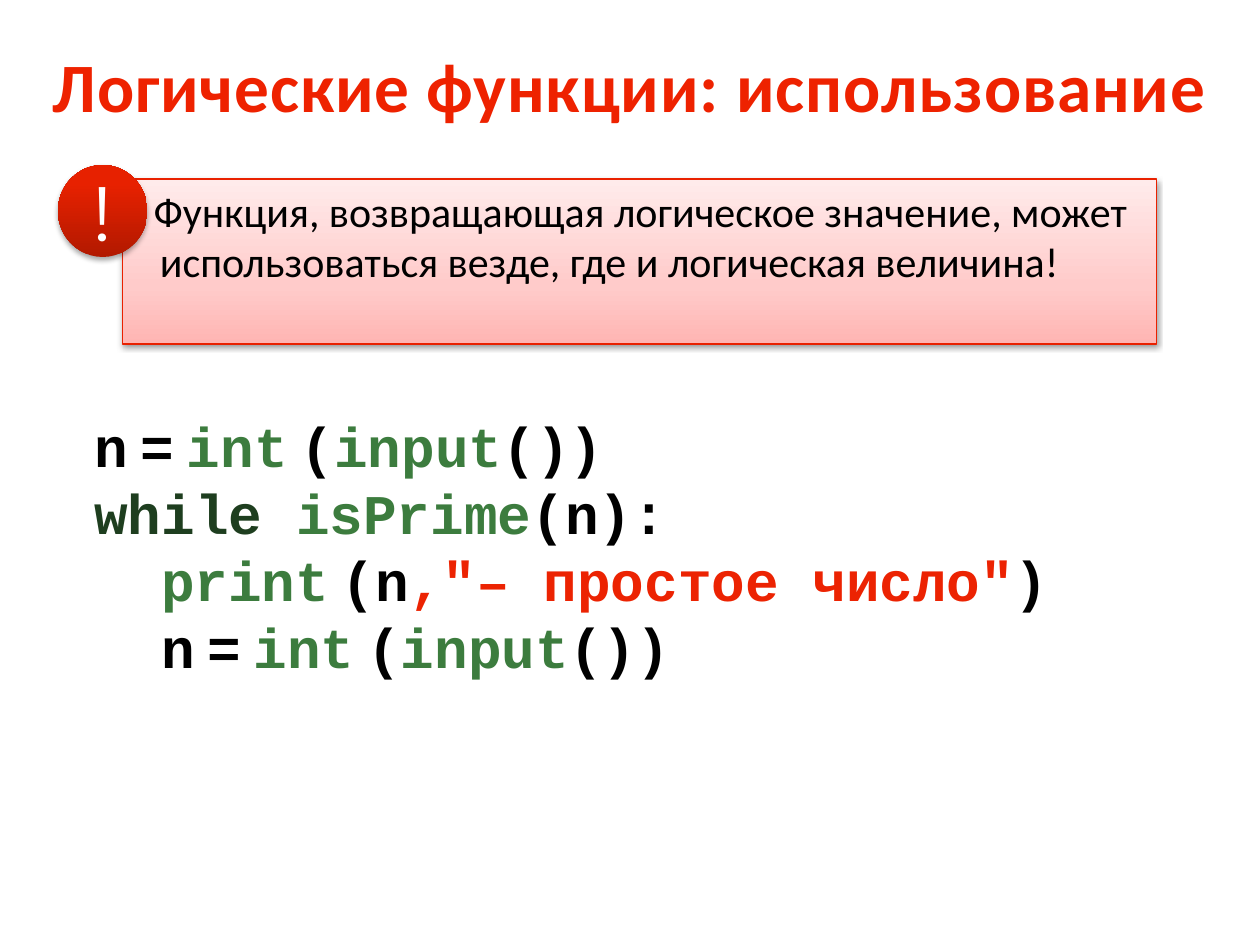
from copy import deepcopy

from lxml import etree
from pptx import Presentation
from pptx import util as u
from pptx.dml.color import RGBColor
from pptx.enum import shapes, text
from pptx.oxml import ns

RED = RGBColor(0xEE, 0x22, 0x00)
STRING_RED = RGBColor(0xEC, 0x23, 0x02)
BORDER_RED = RGBColor(0xE9, 0x21, 0x00)
GREEN = RGBColor(0x3C, 0x7C, 0x3E)
DARK_GREEN = RGBColor(0x1E, 0x3E, 0x1F)
BLACK = RGBColor(0, 0, 0)
WHITE = RGBColor(0xFF, 0xFF, 0xFF)
CALLOUT_STOPS = [(0, RGBColor(0xFF, 0xB5, 0xB3)), (0.35, RGBColor(0xFF, 0xCB, 0xCA)),
                 (1, RGBColor(0xFF, 0xEB, 0xEB))]
BADGE_STOPS = [(0, RGBColor(0xB2, 0x19, 0x00)), (0.8, RGBColor(0xE7, 0x21, 0x00)),
               (1, RGBColor(0xE8, 0x21, 0x00))]

TITLE = {"name": "Calibri", "size": u.Pt(39.6), "bold": True}
BODY = {"name": "Calibri", "size": u.Pt(24)}
BADGE = {"name": "Montserrat", "size": u.Pt(44)}
CODE = {"name": "Courier New", "size": u.Pt(32), "bold": True}
NARROW_SPACE = {**CODE, "name": "Calibri"}

READ_NUMBER = [("n", BLACK), (" ", None), ("=", BLACK), (" ", None), ("int", GREEN),
               (" ", None), ("(", BLACK), ("input", GREEN), ("())", BLACK)]
PROGRAM = [
    (0, READ_NUMBER),
    (0, [("while ", DARK_GREEN), ("isPrime", GREEN), ("(n):", BLACK)]),
    (1, [("print", GREEN), (" ", None), ("(n", BLACK),
         (",\"– простое число\"", STRING_RED), (")", BLACK)]),
    (1, READ_NUMBER),
]


def apply(target, values):
    """Set every attribute in values on target."""
    for name, value in values.items():
        setattr(target, name, value)


class SlideBuilder:
    """Holds the style and the current slide."""

    def __init__(self, presentation):
        """Add a slide with only a title."""
        self.slide = presentation.slides.add_slide(presentation.slide_layouts[5])
        self.group = None

    def box(self, left, top, width, height):
        """Return four lengths in inches."""
        return [u.Inches(value) for value in (left, top, width, height)]

    def run(self, paragraph, words, style, color):
        """Add formatted words to a paragraph."""
        run = paragraph.add_run()
        run.text = words
        apply(run.font, style)
        run.font.color.rgb = color
        return run

    def indent(self, paragraph, margin, first):
        """Set the left margin and first line indent."""
        properties = paragraph._p.get_or_add_pPr()
        properties.set("marL", str(u.Inches(margin)))
        properties.set("indent", str(u.Inches(first)))

    def title(self, words, box):
        """Fill and place the title."""
        shape = self.slide.shapes.title
        apply(shape, dict(zip(("left", "top", "width", "height"), self.box(*box))))
        shape.text_frame.vertical_anchor = text.MSO_ANCHOR.MIDDLE
        paragraph = shape.text_frame.paragraphs[0]
        paragraph.alignment = text.PP_ALIGN.CENTER
        run = self.run(paragraph, words, TITLE, RED)
        run.font._element.set("spc", "50")

    def code(self, lines, box):
        """Add a program listing."""
        frame = self.slide.shapes.add_textbox(*self.box(*box)).text_frame
        apply(frame, {"word_wrap": True, "vertical_anchor": text.MSO_ANCHOR.MIDDLE})
        for number, (level, tokens) in enumerate(lines):
            paragraph = frame.add_paragraph() if number else frame.paragraphs[0]
            paragraph.alignment = text.PP_ALIGN.JUSTIFY
            self.indent(paragraph, 0.2 + 0.53 * level, -0.1)
            for words, color in tokens:
                style = NARROW_SPACE if words == " " else CODE
                self.run(paragraph, words, style, color or BLACK)

    def gradient_shape(self, kind, box, stops, opacity):
        """Add a shape with a vertical gradient and a soft shadow."""
        self.group = self.group or self.slide.shapes.add_group_shape()
        shape = self.group.shapes.add_shape(kind, *self.box(*box))
        shape.fill.gradient()
        shape.fill.gradient_angle = 90
        stop_list = shape._element.spPr.find(".//" + ns.qn("a:gsLst"))
        stop_list.insert(1, deepcopy(stop_list[0]))
        for stop, (position, color) in zip(shape.fill.gradient_stops, stops):
            stop.position = position
            stop.color.rgb = color
        shape.shadow.inherit = False
        effects = shape._element.spPr.find(ns.qn("a:effectLst"))
        shadow = etree.SubElement(effects, ns.qn("a:outerShdw"), blurRad="40000",
                                  dist="20000", dir="5400000", rotWithShape="0")
        color = etree.SubElement(shadow, ns.qn("a:srgbClr"), val="000000")
        etree.SubElement(color, ns.qn("a:alpha"), val=str(opacity * 1000))
        return shape

    def callout(self, words, box):
        """Add the panel with the main statement."""
        shape = self.gradient_shape(shapes.MSO_SHAPE.RECTANGLE, box, CALLOUT_STOPS, 38)
        shape.line.color.rgb = BORDER_RED
        shape.line.width = u.Pt(0.75)
        frame = shape.text_frame
        apply(frame, {"word_wrap": True, "vertical_anchor": text.MSO_ANCHOR.TOP})
        paragraph = frame.paragraphs[0]
        paragraph.alignment = text.PP_ALIGN.LEFT
        self.indent(paragraph, 0.2, -0.05)
        self.run(paragraph, words, BODY, BLACK)

    def badge(self, words, box):
        """Add the round mark on the panel corner."""
        shape = self.gradient_shape(shapes.MSO_SHAPE.OVAL, box, BADGE_STOPS, 35)
        shape.line.fill.background()
        frame = shape.text_frame
        apply(frame, {"word_wrap": False, "vertical_anchor": text.MSO_ANCHOR.MIDDLE})
        paragraph = frame.paragraphs[0]
        paragraph.alignment = text.PP_ALIGN.CENTER
        self.run(paragraph, words, BADGE, WHITE)


def main():
    """Build and save the slide."""
    presentation = Presentation()
    apply(presentation, {"slide_width": u.Inches(10), "slide_height": u.Inches(7.5)})
    builder = SlideBuilder(presentation)
    builder.title("Логические функции: использование", (0, 0.25, 10, 0.85))
    builder.code(PROGRAM, (0.55, 3.2, 9.04, 2.26))
    builder.callout("Функция, возвращающая логическое значение, может "
                    "использоваться везде, где и логическая величина!",
                    (0.97, 1.42, 8.21, 1.31))
    builder.badge("!", (0.46, 1.31, 0.71, 0.73))
    presentation.save("out.pptx")


if __name__ == "__main__":
    main()
